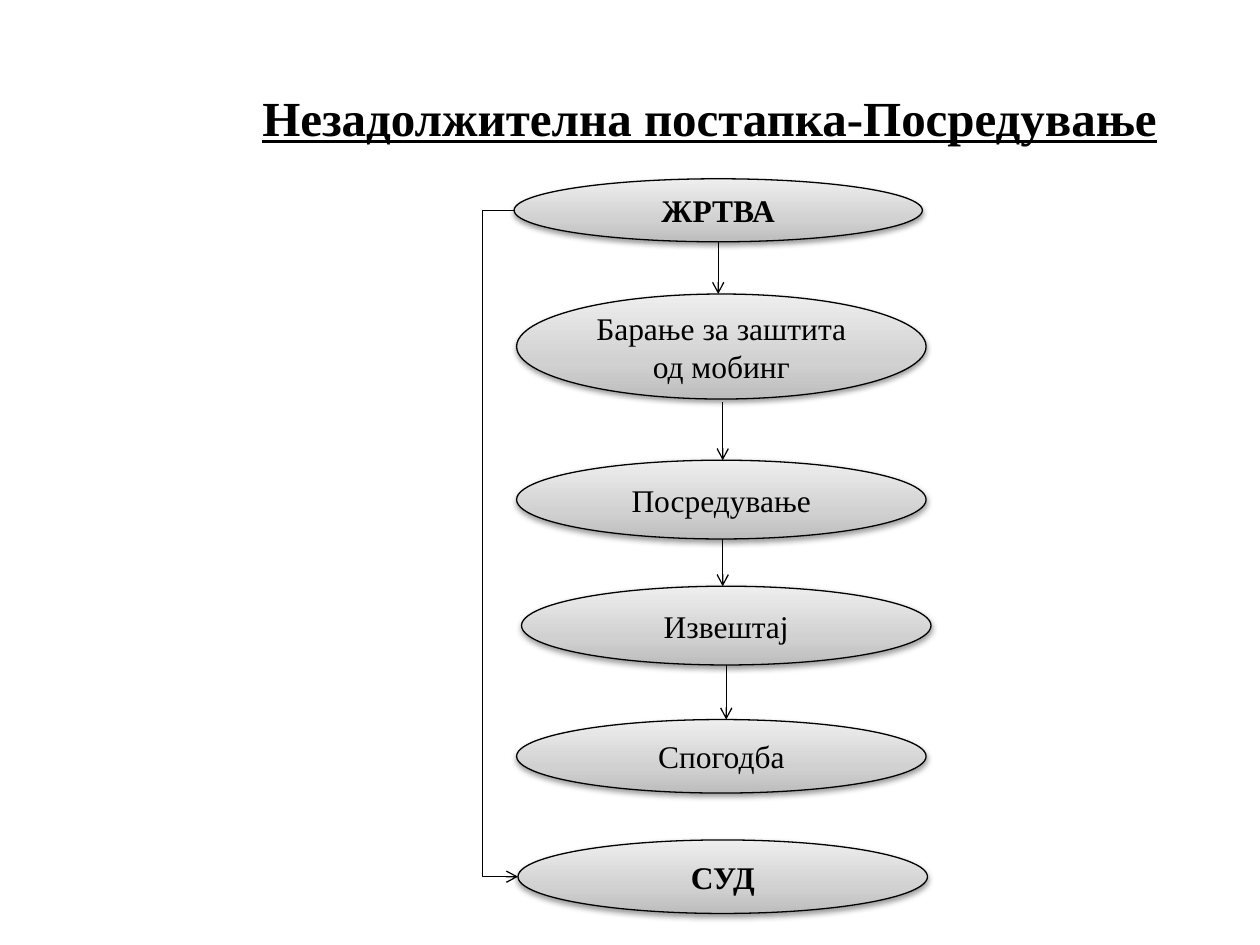
from copy import deepcopy
from itertools import pairwise

from lxml import etree
from pptx import Presentation
from pptx.dml.color import RGBColor
from pptx.enum.shapes import MSO_CONNECTOR, MSO_SHAPE
from pptx.enum.text import MSO_ANCHOR, PP_ALIGN
from pptx.oxml.ns import qn
from pptx.util import Pt

INK = "000000"
SHADING = [(0, "BDBDBD"), (0.35, "D1D1D1"), (1, "EEEEEE")]
STEPS = [
    ("ЖРТВА", (293.8, 102.2, 233.3, 36), True),
    ("Барање за заштита од мобинг", (295.2, 168, 234, 60), False),
    ("Посредување", (295.2, 263, 234, 45), False),
    ("Извештај", (298, 335, 234, 45), False),
    ("Спогодба", (295.2, 411.2, 234, 42), False),
    ("СУД", (296, 480, 234, 42), True),
]
ARROWS = [(410.4, 0), (413, 2), (413, 0), (415, 0)]
BYPASS_X = 275.8


def color(hex_string):
    return RGBColor.from_string(hex_string)


def format_text(frame, text, size, **formats):
    frame.word_wrap = True
    frame.vertical_anchor = MSO_ANCHOR.MIDDLE
    paragraph = frame.paragraphs[0]
    paragraph.alignment = PP_ALIGN.CENTER
    run = paragraph.add_run()
    run.text = text
    values = {"name": "Times New Roman", "size": Pt(size), **formats}
    for name, value in values.items():
        setattr(run.font, name, value)
    run.font.color.rgb = color(INK)


def outline(part):
    part.line.color.rgb = color(INK)
    part.line.width = Pt(0.75)


def add_heading(slide, box):
    heading = slide.shapes.title
    for name, value in zip(("left", "top", "width", "height"), box):
        setattr(heading, name, Pt(value))
    heading.text_frame.margin_left = Pt(98)
    format_text(heading.text_frame, "Незадолжителна постапка-Посредување", 28,
                bold=True, underline=True)


def shade(step):
    step.fill.gradient()
    step.fill.gradient_angle = 90
    stops = step._element.spPr.find(qn("a:gradFill")).find(qn("a:gsLst"))
    stops.append(deepcopy(stops[-1]))
    for stop, (position, tone) in zip(step.fill.gradient_stops, SHADING):
        stop.position = position
        stop.color.rgb = color(tone)


def cast_shadow(step):
    step.shadow.inherit = False
    effects = step._element.spPr.find(qn("a:effectLst"))
    shadow = etree.SubElement(effects, qn("a:outerShdw"), blurRad=str(Pt(3.15)),
                              dist=str(Pt(1.57)), dir="5400000", rotWithShape="0")
    tone = etree.SubElement(shadow, qn("a:srgbClr"), val=INK)
    etree.SubElement(tone, qn("a:alpha"), val="38000")


def add_step(slide, text, box, bold):
    step = slide.shapes.add_shape(MSO_SHAPE.OVAL, *map(Pt, box))
    shade(step)
    outline(step)
    cast_shadow(step)
    format_text(step.text_frame, text, 18, bold=bold)


def add_arrow(slide, kind, *ends):
    arrow = slide.shapes.add_connector(kind, *map(Pt, ends))
    outline(arrow)
    etree.SubElement(arrow.line._get_or_add_ln(), qn("a:tailEnd"), type="arrow")
    etree.SubElement(arrow._element.spPr, qn("a:effectLst"))
    return arrow


def add_bypass(slide, start, end, bend_x):
    (left, top, _, height), (end_left, end_top, _, end_height) = start, end
    bypass = add_arrow(slide, MSO_CONNECTOR.ELBOW, left, top + height / 2,
                       end_left, end_top + end_height / 2)
    bend = round((bend_x - left) / (end_left - left) * 100000)
    guides = bypass._element.spPr.find(qn("a:prstGeom")).find(qn("a:avLst"))
    etree.SubElement(guides, qn("a:gd"), name="adj1", fmla=f"val {bend}")


def add_procedure(slide, steps):
    for step in steps:
        add_step(slide, *step)
    boxes = [box for _, box, _ in steps]
    for (upper, lower), (x, gap) in zip(pairwise(boxes), ARROWS):
        add_arrow(slide, MSO_CONNECTOR.STRAIGHT,
                  x, upper[1] + upper[3] + gap, x, lower[1])
    add_bypass(slide, boxes[0], boxes[-1], BYPASS_X)


def main():
    deck = Presentation()
    deck.slide_width, deck.slide_height = Pt(720), Pt(540)
    slide = deck.slides.add_slide(deck.slide_layouts[5])
    add_heading(slide, (36, 21.6, 648, 90))
    add_procedure(slide, STEPS)
    deck.save("out.pptx")


if __name__ == "__main__":
    main()
